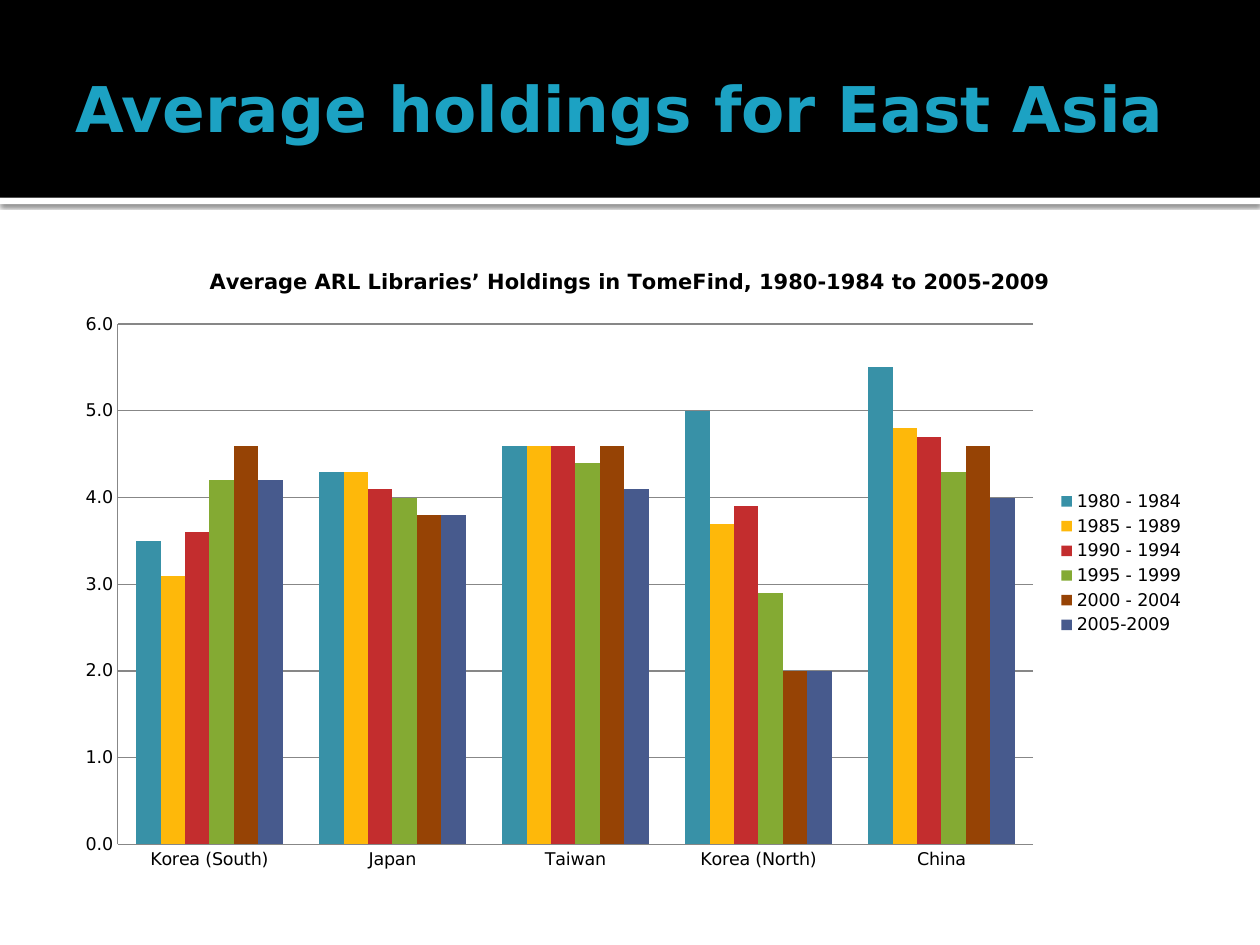
from lxml import etree
from pptx import Presentation
from pptx.chart.data import CategoryChartData
from pptx.dml.color import RGBColor
from pptx.enum.chart import XL_CHART_TYPE, XL_LEGEND_POSITION, XL_TICK_MARK
from pptx.enum.shapes import MSO_SHAPE
from pptx.enum.text import MSO_ANCHOR
from pptx.oxml.ns import qn
from pptx.util import Inches, Pt

RECT = MSO_SHAPE.RECTANGLE
COLUMN = XL_CHART_TYPE.COLUMN_CLUSTERED
RIGHT = XL_LEGEND_POSITION.RIGHT
NO_TICK = XL_TICK_MARK.NONE
MIDDLE = MSO_ANCHOR.MIDDLE

FONT = "DejaVu Sans"
COLORS = {"black": "000000", "white": "FFFFFF", "title": "1CA2C3", "grid": "878787"}
TITLE = "Average holdings for East Asia"
HEAD = "Average ARL Libraries’ Holdings in TomeFind, 1980-1984 to 2005-2009"
PLACES = ["Korea (South)", "Japan", "Taiwan", "Korea (North)", "China"]
SERIES = [
    ("1980 - 1984", "3891A7", [3.5, 4.3, 4.6, 5.0, 5.5]),
    ("1985 - 1989", "FEB80A", [3.1, 4.3, 4.6, 3.7, 4.8]),
    ("1990 - 1994", "C32D2E", [3.6, 4.1, 4.6, 3.9, 4.7]),
    ("1995 - 1999", "84AA33", [4.2, 4.0, 4.4, 2.9, 4.3]),
    ("2000 - 2004", "964305", [4.6, 3.8, 4.6, 2.0, 4.6]),
    ("2005-2009", "475A8D", [4.2, 3.8, 4.1, 2.0, 4.0]),
]
BAND = 1.57


def paint(fill, color):
    fill.solid()
    fill.fore_color.rgb = RGBColor.from_string(color)


def style(font, size, color, bold=False):
    font.name = FONT
    font.size = Pt(size)
    font.bold = bold
    font.color.rgb = RGBColor.from_string(color)


def add_bar(slide, top, height, color):
    bar = slide.shapes.add_shape(RECT, 0, Inches(top), Inches(10), Inches(height))
    paint(bar.fill, color)
    bar.line.fill.background()
    bar.shadow.inherit = False
    return bar


def add_shadow(shape):
    effects = shape._element.spPr.find(qn("a:effectLst"))
    outer = etree.SubElement(effects, qn("a:outerShdw"), blurRad=str(Pt(2.5)),
                             dist=str(Pt(0.8)), dir="5400000", rotWithShape="0")
    color = etree.SubElement(outer, qn("a:srgbClr"), val=COLORS["black"])
    etree.SubElement(color, qn("a:alpha"), val="60000")


def add_title(slide):
    box = slide.shapes.add_textbox(Inches(0.5), Inches(0.17), Inches(9), Inches(1.37))
    frame = box.text_frame
    frame.word_wrap = True
    frame.vertical_anchor = MIDDLE
    frame.margin_left = Inches(0.1)
    frame.margin_right = frame.margin_top = frame.margin_bottom = Inches(0.05)
    line = frame.paragraphs[0]
    line.text = TITLE
    style(line.font, 36, COLORS["title"], True)


def add_chart(slide):
    data = CategoryChartData(number_format="#,##0.0")
    data.categories = PLACES
    for name, _, vals in SERIES:
        data.add_series(name, vals)
    chart = slide.shapes.add_chart(COLUMN, Inches(0.5), Inches(1.94),
                                   Inches(9), Inches(5.06), data).chart
    style(chart.font, 10, COLORS["black"])
    chart.has_title = True
    head = chart.chart_title.text_frame.paragraphs[0]
    head.text = HEAD
    style(head.font, 12, COLORS["black"], True)
    chart.chart_title.include_in_layout = False
    chart.has_legend = True
    chart.legend.position = RIGHT
    chart.legend.include_in_layout = False

    plot = chart.plots[0]
    plot.gap_width = 150
    plot.overlap = 0
    plot.vary_by_categories = False
    for series, (_, color, _) in zip(plot.series, SERIES):
        paint(series.format.fill, color)

    scale = chart.value_axis
    scale.minimum_scale = 0
    scale.maximum_scale = 6
    scale.major_unit = 1
    scale.has_major_gridlines = True
    scale.tick_labels.number_format = "#,##0.0"
    scale.tick_labels.number_format_is_linked = False
    for axis in (scale, chart.category_axis):
        axis.major_tick_mark = axis.minor_tick_mark = NO_TICK
    for part in (scale, scale.major_gridlines, chart.category_axis):
        paint(part.format.line.fill, COLORS["grid"])
        part.format.line.width = Pt(0.75)


def main():
    deck = Presentation()
    deck.slide_width = Inches(10)
    deck.slide_height = Inches(7.5)
    slide = deck.slides.add_slide(deck.slide_layouts[6])
    paint(slide.background.fill, COLORS["white"])
    add_shadow(add_bar(slide, BAND, 0.05, COLORS["white"]))
    add_bar(slide, 0, BAND, COLORS["black"])
    add_title(slide)
    add_chart(slide)
    deck.save("out.pptx")


if __name__ == "__main__":
    main()
